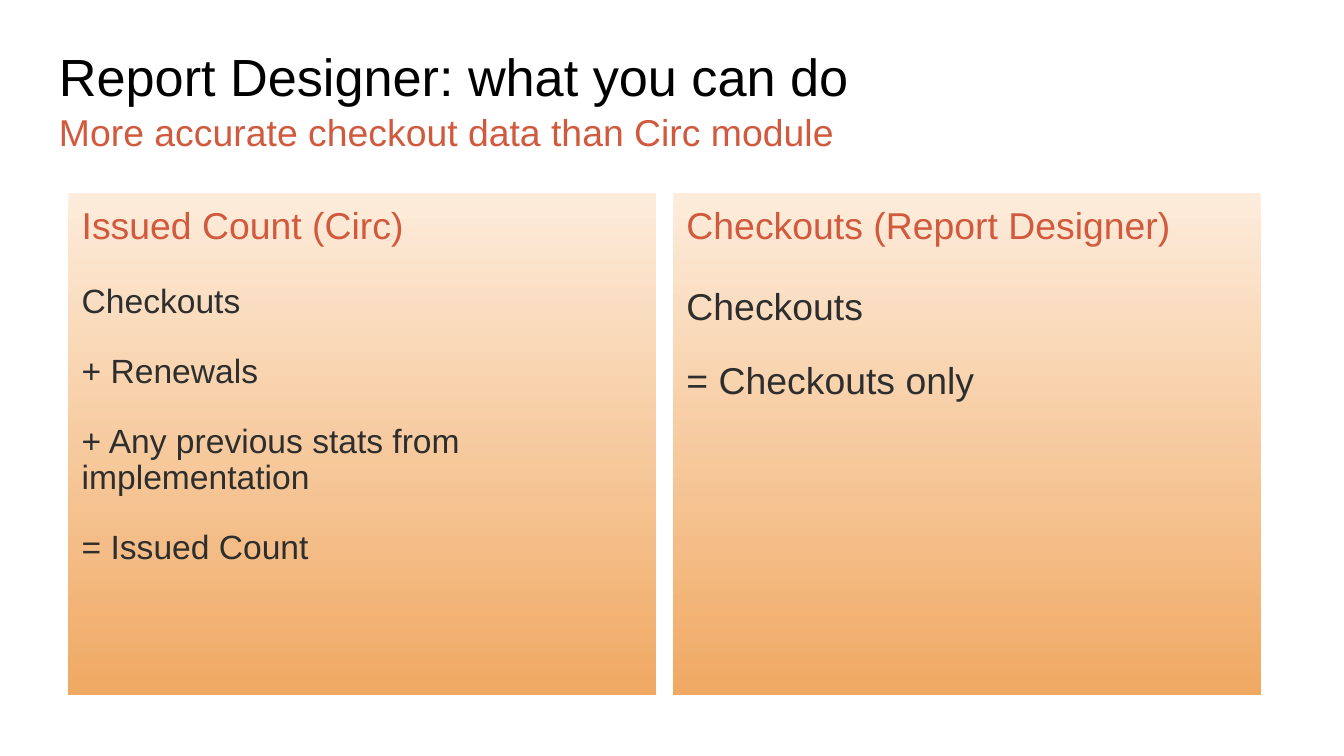
import dataclasses

import pptx
import pptx.dml.color
import pptx.enum.shapes
import pptx.enum.text
import pptx.util

WIDTH = 10
HEIGHT = WIDTH * 9 / 16
PANEL_LEFT, PANEL_TOP = 0.51, 1.44
PANEL_WIDTH, PANEL_HEIGHT = 4.37, 3.73
COLUMN_STEP = 4.5
LINE_SPACING = 0.9


@dataclasses.dataclass(frozen=True)
class Theme:
    font: str = "Arial"
    title_color: str = "000000"
    accent: str = "D15A3E"
    body_color: str = "2D2E2D"
    panel_gradient: tuple = ("FDECDB", "F0A963")
    title_size: int = 28
    heading_size: int = 20
    item_gap: int = 18


THEME = Theme()

PANELS = [
    ("Issued Count (Circ)", 18,
     ["Checkouts", "+ Renewals",
      "+ Any previous stats from implementation", "= Issued Count"]),
    ("Checkouts (Report Designer)", 20,
     ["Checkouts", "= Checkouts only"]),
]


def rgb(value):
    return pptx.dml.color.RGBColor.from_string(value)


def set_up_frame(frame):
    """Wrap the text from the top, with equal insets on all sides."""
    frame.word_wrap = True
    frame.vertical_anchor = pptx.enum.text.MSO_ANCHOR.TOP
    inset = pptx.util.Inches(0.1)
    frame.margin_left = frame.margin_right = inset
    frame.margin_top = frame.margin_bottom = inset


def add_run(paragraph, words, size, color):
    paragraph.alignment = pptx.enum.text.PP_ALIGN.LEFT
    run = paragraph.add_run()
    run.text = words
    run.font.name = THEME.font
    run.font.size = pptx.util.Pt(size)
    run.font.color.rgb = rgb(color)


def add_title_line(slide, top, words, size, color):
    box = slide.shapes.add_textbox(
        *map(pptx.util.Inches, (0.34, top, 9.32, 0.63)))
    set_up_frame(box.text_frame)
    add_run(box.text_frame.paragraphs[0], words, size, color)


def add_panel(slide, column, heading, item_size, items):
    left = PANEL_LEFT + column * COLUMN_STEP
    panel = slide.shapes.add_shape(
        pptx.enum.shapes.MSO_SHAPE.RECTANGLE,
        *map(pptx.util.Inches, (left, PANEL_TOP, PANEL_WIDTH, PANEL_HEIGHT)))
    panel.shadow.inherit = False
    panel.line.fill.background()
    panel.fill.gradient()
    panel.fill.gradient_angle = 270
    for stop, position, color in zip(
            panel.fill.gradient_stops, (0, 1), THEME.panel_gradient):
        stop.position = position
        stop.color.rgb = rgb(color)

    frame = panel.text_frame
    set_up_frame(frame)
    title = frame.paragraphs[0]
    title.line_spacing = LINE_SPACING
    # One line of the item size separates the heading from the items.
    title.space_after = pptx.util.Pt(round(item_size * 1.22 * LINE_SPACING, 1))
    add_run(title, heading, THEME.heading_size, THEME.accent)
    for index, item in enumerate(items):
        paragraph = frame.add_paragraph()
        paragraph.line_spacing = LINE_SPACING
        paragraph.space_before = pptx.util.Pt(THEME.item_gap if index else 0)
        add_run(paragraph, item, item_size, THEME.body_color)


def main():
    deck = pptx.Presentation()
    deck.slide_width = pptx.util.Inches(WIDTH)
    deck.slide_height = pptx.util.Inches(HEIGHT)
    slide = deck.slides.add_slide(deck.slide_layouts[6])
    for column, (heading, item_size, items) in enumerate(PANELS):
        add_panel(slide, column, heading, item_size, items)
    add_title_line(slide, 0.23, "Report Designer: what you can do",
                   THEME.title_size, THEME.title_color)
    add_title_line(slide, 0.71, "More accurate checkout data than Circ module",
                   THEME.heading_size, THEME.accent)
    deck.save("out.pptx")


if __name__ == "__main__":
    main()
